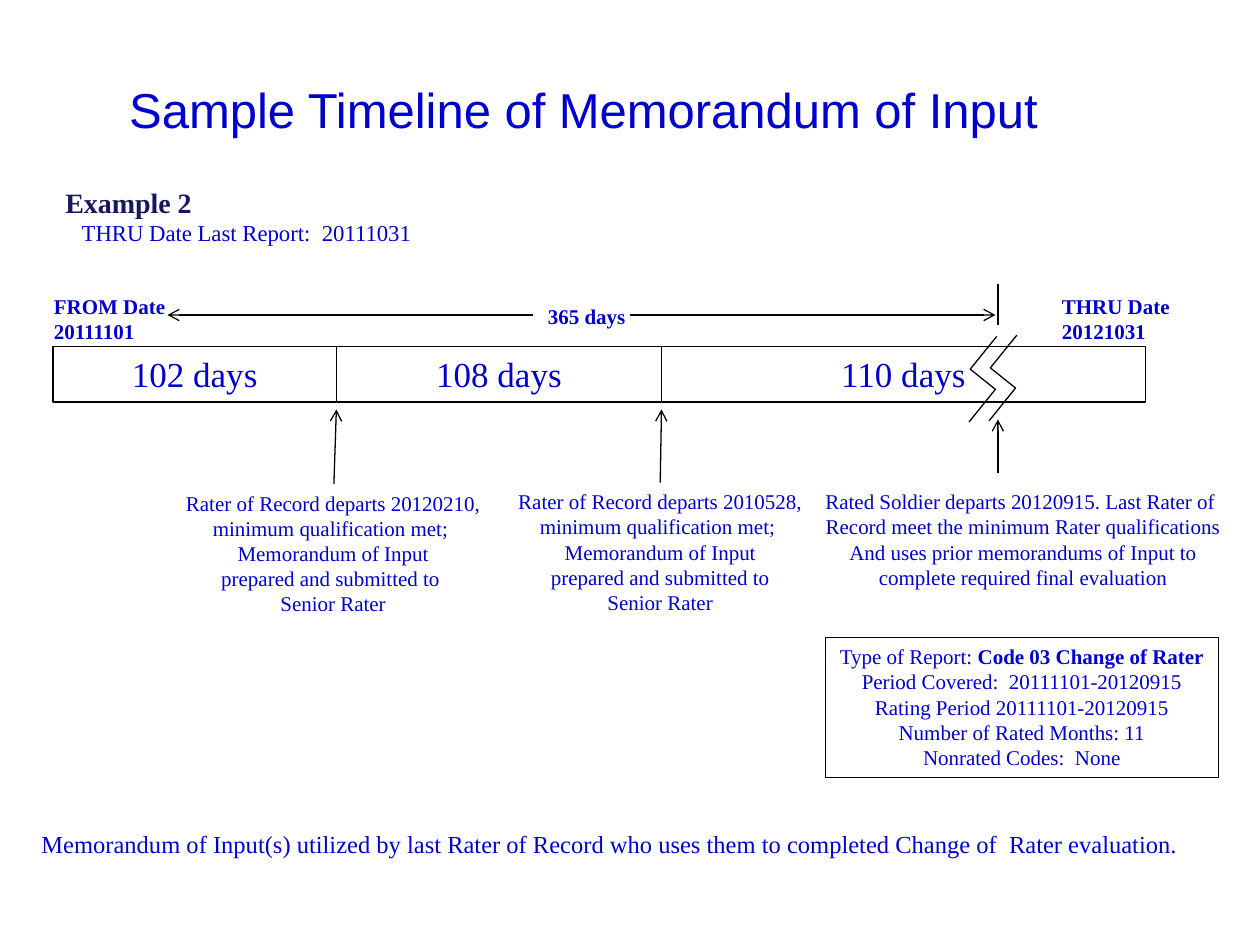
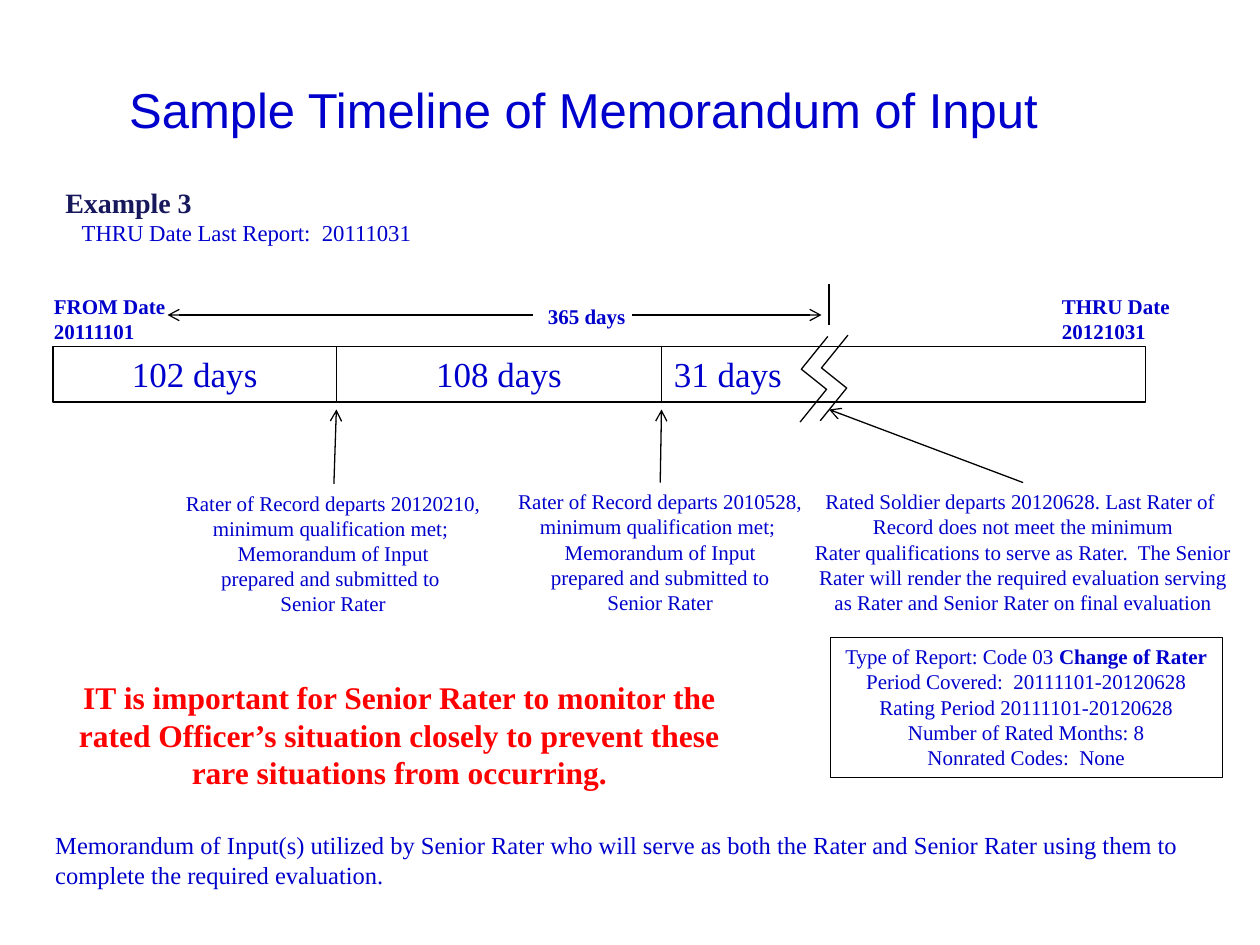
from dataclasses import dataclass

from pptx import Presentation
from pptx.dml.color import RGBColor
from pptx.enum.shapes import MSO_CONNECTOR as LINK, MSO_SHAPE as SHAPE
from pptx.enum.text import MSO_ANCHOR as ANCHOR, PP_ALIGN as ALIGN
from pptx.oxml.ns import qn
from pptx.util import Inches, Pt
from lxml import etree


@dataclass(frozen=True)
class Theme:
    blue: str = "0000CC"
    navy: str = "17175C"
    red: str = "FF0000"
    black: str = "000000"
    head: str = "Arial"
    body: str = "Times New Roman"
    title: int = 28
    bar: int = 20
    alert: int = 18
    label: int = 16
    note: int = 14
    sub: int = 13
    small: int = 12
    rule: float = 0.75


T = Theme()
LEFT, MID = ALIGN.LEFT, ALIGN.CENTER
BAR = (0.42, 2.75, 8.67, 0.44)
CUTS = (2.67, 5.25)  # where one rater leaves and the next begins


def place(box):
    return [Inches(n) for n in box]


def style(para, size, color=T.blue, bold=False, font=T.body, align=LEFT):
    para.alignment = align
    for run in para.runs:
        run.font.size = Pt(size)
        run.font.name = font
        run.font.bold = bold
        run.font.color.rgb = RGBColor.from_string(color)


def fill(shape, lines, size, wrap=True, **look):
    """Write one paragraph per line, all in the same look."""
    frame = shape.text_frame
    frame.word_wrap = wrap
    frame.text = "\n".join(lines)
    for para in frame.paragraphs:
        style(para, size, **look)
    return frame


def write(slide, box, lines, size, **look):
    return fill(slide.shapes.add_textbox(*place(box)), lines, size, **look)


def ink(shape):
    shape.line.color.rgb = RGBColor.from_string(T.black)
    shape.line.width = Pt(T.rule)


def frame(slide, box, lines, size, **look):
    """Outlined rectangle with text."""
    rect = slide.shapes.add_shape(SHAPE.RECTANGLE, *place(box))
    rect.shadow.inherit = False
    rect.fill.background()
    ink(rect)
    body = fill(rect, lines, size, **look)
    body.vertical_anchor = ANCHOR.TOP
    return body


def link(slide, start, end, arrow=True):
    line = slide.shapes.add_connector(LINK.STRAIGHT, *place(start + end))
    ink(line)
    props = line._element.spPr
    if arrow:
        etree.SubElement(props.find(qn("a:ln")), qn("a:tailEnd"), type="arrow")
    etree.SubElement(props, qn("a:effectLst"))


def header(slide, box, number):
    x, y, w, _ = box
    title = slide.shapes.title
    title.left, title.top, title.width, title.height = place((x, y, w, 0.57))
    fill(title, ["Sample Timeline of Memorandum of Input"], T.title,
         font=T.head, align=MID)
    label = write(slide, (x + 0.25, y + 0.84, 2.98, 0.59),
                  [f"Example {number}", "THRU Date Last Report:  20111031"], T.label)
    first, last = label.paragraphs
    style(first, T.label, T.navy, True)
    style(last, T.sub)
    last._p.get_or_add_pPr().set("marL", str(Inches(0.13)))


def zigzag(slide, x, y):
    """Break mark whose top right corner is at x, y."""
    pen = slide.shapes.build_freeform(Inches(x), Inches(y), 1)
    steps = ((-0.21, 0.26), (-0.01, 0.42), (-0.22, 0.68))
    pen.add_line_segments([place((x + dx, y + dy)) for dx, dy in steps], close=False)
    mark = pen.convert_to_shape()
    mark.shadow.inherit = False
    mark.fill.background()
    ink(mark)


def timeline(slide, box, days, align, leave, span):
    """Bar with its dates and breaks; leave is where the soldier departs."""
    x, y, w, h = box
    edges = (x, *CUTS, x + w)
    for left, right, count, side in zip(edges, edges[1:], days, (MID, MID, align)):
        frame(slide, (left, y, right - left, h), [f"{count} days"], T.bar, align=side)
    for dx, lines in ((-0.09, ["FROM Date", "20111101"]), (7.91, ["THRU Date", "20121031"])):
        write(slide, (x + dx, y - 0.47, 1.17, 0.5), lines, T.small, bold=True)
    write(slide, (x + 3.83, y - 0.39, 0.82, 0.3), ["365 days"], T.small,
          wrap=False, bold=True)
    mid = y - 0.25
    link(slide, (x + 3.81, mid), (x + 0.91, mid))
    link(slide, (span[0], mid), (span[1], mid))
    link(slide, (leave, y - 0.17), (leave, y - 0.5), arrow=False)
    zigzag(slide, leave + 0.15, y - 0.09)
    zigzag(slide, leave - 0.01, y - 0.08)


def raters(slide, box):
    """Two departures, each with an arrow up to its cut in the bar."""
    x, y, _, h = box
    parts = ((0, 0.01, 2.57, "20120210", " ", 1.29), (2.64, 0, 2.48, "2010528", "", 3.88))
    for cut, (dx, dy, wide, date, tail, stem) in zip(CUTS, parts):
        write(slide, (x + dx, y + dy, wide, h),
              [f"Rater of Record departs {date},", "minimum qualification met; ",
               "Memorandum of Input", f"prepared and submitted to{tail}", "Senior Rater"],
              T.small, wrap=False, align=MID)
        link(slide, (x + stem, y + dy), (cut, 3.25))


def soldier(slide, box, lines, start, end):
    write(slide, box, lines, T.small, align=MID)
    link(slide, start, end)


def report(slide, box, kind, strong, until, months):
    body = frame(slide, box,
                 [f"Type of Report: {kind}", f"Period Covered:  20111101-{until}",
                  f"Rating Period 20111101-{until}",
                  f"Number of Rated Months: {months}", "Nonrated Codes:  None"],
                 T.small, wrap=False, align=MID)
    first = body.paragraphs[0]
    first.add_run().text = strong
    style(first, T.small, align=MID)
    first.runs[-1].font.bold = True


def example(deck, number, days, align, leave, span):
    """Slide with the parts that every example shares."""
    slide = deck.slides.add_slide(deck.slide_layouts[5])
    header(slide, (0.17, 0.58, 8.92, 1.43), number)
    timeline(slide, BAR, days, align, leave, span)
    raters(slide, (1.36, 3.83, 5.12, 1.11))
    return slide


def qualified(deck):
    slide = example(deck, 2, (102, 108, 110), MID, 7.92, (5, 7.9))
    soldier(slide, (6.33, 3.83, 3.58, 0.91),
            ["Rated Soldier departs 20120915. Last Rater of ",
             "Record meet the minimum Rater qualifications",
             "And uses prior memorandums of Input to",
             "complete required final evaluation"], (7.92, 3.75), (7.92, 3.33))
    report(slide, (6.55, 5.06, 3.12, 1.11), "", "Code 03 Change of Rater", "20120915", 11)
    write(slide, (0.23, 6.53, 9.59, 0.34),
          ["Memorandum of Input(s) utilized by last Rater of Record who uses them "
           "to completed Change of  Rater evaluation."], T.note, wrap=False)


def unqualified(deck):
    slide = example(deck, 3, (102, 108, 31), LEFT, 6.58, (5.02, 6.52))
    soldier(slide, (6.33, 3.83, 3.58, 1.11),
            ["Rated Soldier departs 20120628. Last Rater of ",
             "Record does not meet the minimum",
             "Rater qualifications to serve as Rater.  The Senior Rater will render the "
             "required evaluation serving as Rater and Senior Rater on final evaluation"],
            (8.12, 3.83), (6.58, 3.25))
    report(slide, (6.59, 5.06, 3.11, 1.11), "Code 03 ", "Change of Rater", "20120628", 8)
    write(slide, (0.42, 5.33, 5.5, 1.01),
          ["IT is important for Senior Rater to monitor the rated Officer’s situation "
           "closely to prevent these rare situations from occurring."],
          T.alert, color=T.red, bold=True, align=MID)
    write(slide, (0.34, 6.54, 9.24, 0.57),
          ["Memorandum of Input(s) utilized by Senior Rater who will serve as both "
           "the Rater and Senior Rater using them to",
           "complete the required evaluation."], T.note, wrap=False)


def main():
    deck = Presentation()
    deck.slide_width, deck.slide_height = place((10, 7.5))
    qualified(deck)
    unqualified(deck)
    deck.save("out.pptx")


if __name__ == "__main__":
    main()
